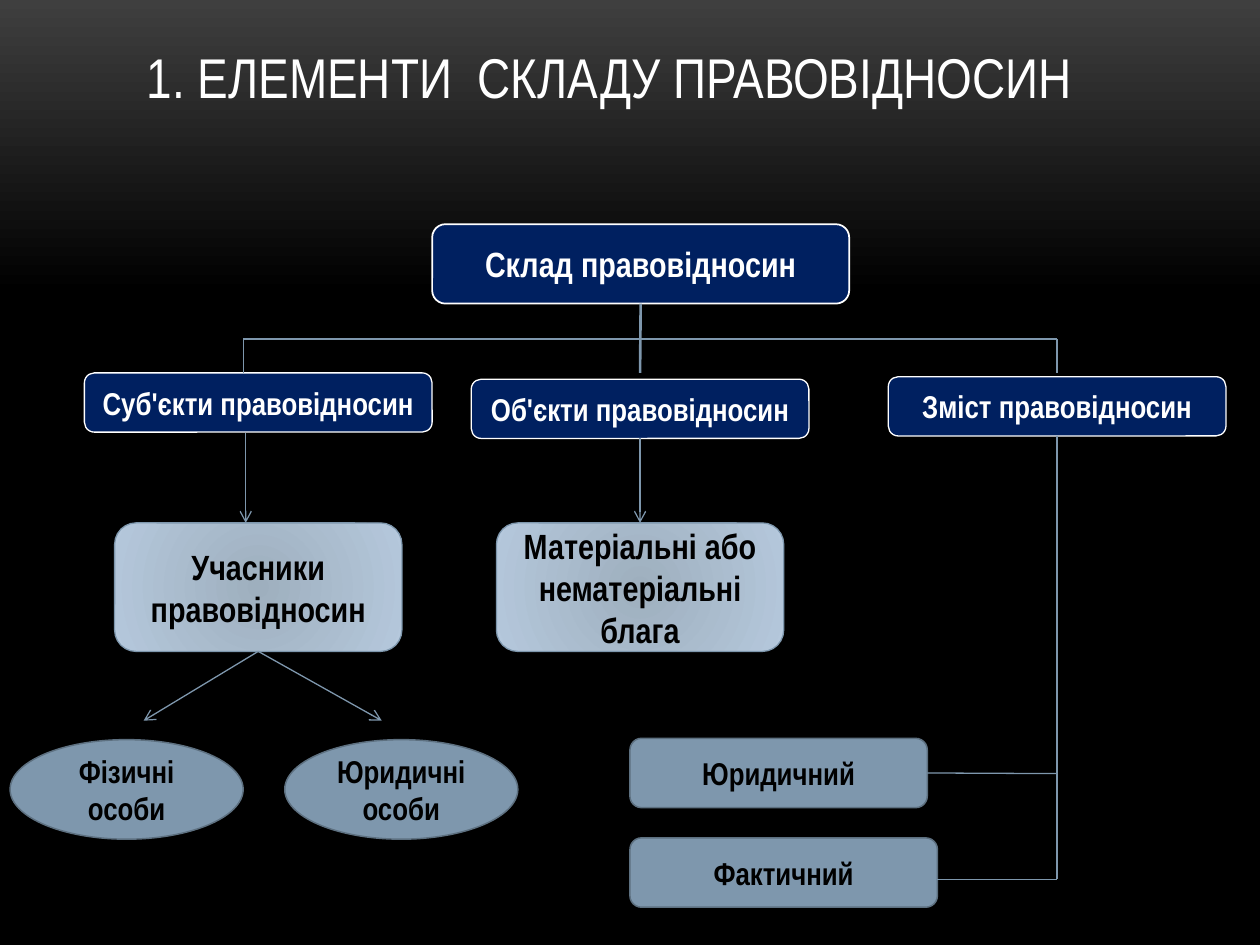
from lxml.etree import SubElement
from pptx import Presentation
from pptx.dml.color import RGBColor
from pptx.enum.shapes import MSO_CONNECTOR, MSO_SHAPE
from pptx.enum.text import MSO_ANCHOR, PP_ALIGN
from pptx.oxml.ns import qn
from pptx.util import Inches, Pt

BLACK = RGBColor(0x00, 0x00, 0x00)
CHARCOAL = RGBColor(0x3F, 0x3F, 0x3F)
WHITE = RGBColor(0xFF, 0xFF, 0xFF)
NAVY = RGBColor(0x00, 0x20, 0x60)
STEEL = RGBColor(0x7E, 0x97, 0xAD)
DARK_STEEL = RGBColor(0x5D, 0x70, 0x80)
MIST = RGBColor(0x9E, 0xAF, 0xBE)
LIGHT_MIST = RGBColor(0xB5, 0xC8, 0xDC)

ROUND, OVAL = MSO_SHAPE.ROUNDED_RECTANGLE, MSO_SHAPE.OVAL
BOTTOM, RIGHT, TOP = 2, 3, 0

deck = Presentation()
deck.slide_width, deck.slide_height = Inches(10), Inches(7.5)
page = deck.slides.add_slide(deck.slide_layouts[6])

# Background fading from charcoal to black
backdrop = page.background.fill
backdrop.gradient()
backdrop.gradient_angle = 270
for stop, color, position in zip(backdrop.gradient_stops, (CHARCOAL, BLACK), (0, 0.31)):
    stop.color.rgb = color
    stop.position = position


def write(box, text, size, color, bold):
    box.text_frame.word_wrap = True
    para = box.text_frame.paragraphs[0]
    para.alignment = PP_ALIGN.CENTER
    span = para.add_run()
    span.text = text
    span.font.name = "Arial Narrow"
    span.font.size = Pt(size)
    span.font.bold = bold
    span.font.color.rgb = color


# Title
title = page.shapes.add_textbox(Inches(0.59), Inches(0.29), Inches(8.5), Inches(0.64))
write(title, "1. ЕЛЕМЕНТИ  СКЛАДУ ПРАВОВІДНОСИН", 32, WHITE, False)

# Boxes: style is fill (None for the radial gradient), outline, outline width, text colour
HEAD = (NAVY, WHITE, 1, WHITE)
BRANCH = (NAVY, WHITE, 0.75, WHITE)
GLOW = (None, STEEL, 0.75, BLACK)
LEAF = (STEEL, DARK_STEEL, 0.85, BLACK)
boxes = {}
for name, kind, left, top, width, height, style, size, text in (
    ("root", ROUND, 3.43, 1.78, 3.31, 0.63, HEAD, 20, "Склад правовідносин"),
    ("subjects", ROUND, 0.67, 2.96, 2.76, 0.47, BRANCH, 18, "Суб'єкти правовідносин"),
    ("objects", ROUND, 3.74, 3.01, 2.68, 0.47, BRANCH, 18, "Об'єкти правовідносин"),
    ("content", ROUND, 7.05, 2.99, 2.68, 0.47, BRANCH, 18, "Зміст правовідносин"),
    ("participants", ROUND, 0.91, 4.15, 2.28, 1.02, GLOW, 20, "Учасники правовідносин"),
    ("goods", ROUND, 3.94, 4.15, 2.28, 1.02, GLOW, 20, "Матеріальні або нематеріальні блага"),
    ("natural", OVAL, 0.08, 5.87, 1.85, 0.79, LEAF, 18, "Фізичні особи"),
    ("legal", OVAL, 2.26, 5.87, 1.85, 0.79, LEAF, 18, "Юридичні особи"),
    ("juridical", ROUND, 5, 5.86, 2.36, 0.55, LEAF, 18, "Юридичний"),
    ("factual", ROUND, 5, 6.65, 2.44, 0.55, LEAF, 18, "Фактичний"),
):
    fill, outline, weight, text_color = style
    box = page.shapes.add_shape(kind, Inches(left), Inches(top), Inches(width), Inches(height))
    box.shadow.inherit = False
    box.line.color.rgb = outline
    box.line.width = Pt(weight)
    box.text_frame.vertical_anchor = MSO_ANCHOR.MIDDLE
    write(box, text, size, text_color, True)
    boxes[name] = box
    if fill is not None:
        box.fill.solid()
        box.fill.fore_color.rgb = fill
        continue

    # Radial gradient and soft shadow
    box.fill.gradient()
    for stop, color in zip(box.fill.gradient_stops, (MIST, LIGHT_MIST)):
        stop.color.rgb = color
    properties = box._element.spPr
    gradient = properties.find(qn("a:gradFill"))
    gradient.remove(gradient.find(qn("a:lin")))
    circle = SubElement(gradient, qn("a:path"), path="circle")
    SubElement(circle, qn("a:fillToRect"), dict.fromkeys("ltrb", "100000"))
    shadow = SubElement(properties.find(qn("a:effectLst")), qn("a:outerShdw"),
                        blurRad=str(Pt(3)), dist=str(Pt(2)), dir="5400000", rotWithShape="0")
    shade = SubElement(shadow, qn("a:srgbClr"), val=str(BLACK))
    SubElement(shade, qn("a:alpha"), val="40000")

# Connectors: start, end, arrowhead, width, joined start, joined end
TRUNK_X, BAR_Y, BRANCH_Y = 5.08, 2.69, 2.96
LEFT_X, RIGHT_X = 1.93, 8.39
for start, end, arrow, weight, source, target in (
    ((TRUNK_X, 2.41), (TRUNK_X, BRANCH_Y), False, 1.5, ("root", BOTTOM), None),
    ((LEFT_X, BAR_Y), (RIGHT_X, BAR_Y), False, 0.75, None, None),
    ((LEFT_X, BAR_Y), (LEFT_X, BRANCH_Y), False, 0.75, None, None),
    ((RIGHT_X, BAR_Y), (RIGHT_X, BRANCH_Y), False, 0.75, None, None),
    ((1.95, 3.44), (1.95, 4.15), True, 0.75, None, None),
    ((TRUNK_X, 3.48), (TRUNK_X, 4.15), True, 0.75, ("objects", BOTTOM), ("goods", TOP)),
    ((2.05, 5.17), (1.14, 5.72), True, 0.75, ("participants", BOTTOM), None),
    ((2.05, 5.17), (3.03, 5.72), True, 0.75, ("participants", BOTTOM), None),
    ((RIGHT_X, 3.46), (RIGHT_X, 6.98), False, 0.75, ("content", BOTTOM), None),
    ((RIGHT_X, 6.98), (7.44, 6.98), False, 0.75, None, None),
    ((RIGHT_X, 6.14), (7.36, 6.14), False, 0.75, None, ("juridical", RIGHT)),
):
    link = page.shapes.add_connector(MSO_CONNECTOR.STRAIGHT, *map(Inches, start + end))
    if source:
        link.begin_connect(boxes[source[0]], source[1])
    if target:
        link.end_connect(boxes[target[0]], target[1])
    link.line.color.rgb = STEEL
    link.line.width = Pt(weight)
    if arrow:
        SubElement(link.line._get_or_add_ln(), qn("a:tailEnd"), type="arrow")
    SubElement(link._element.spPr, qn("a:effectLst"))

deck.save("out.pptx")
